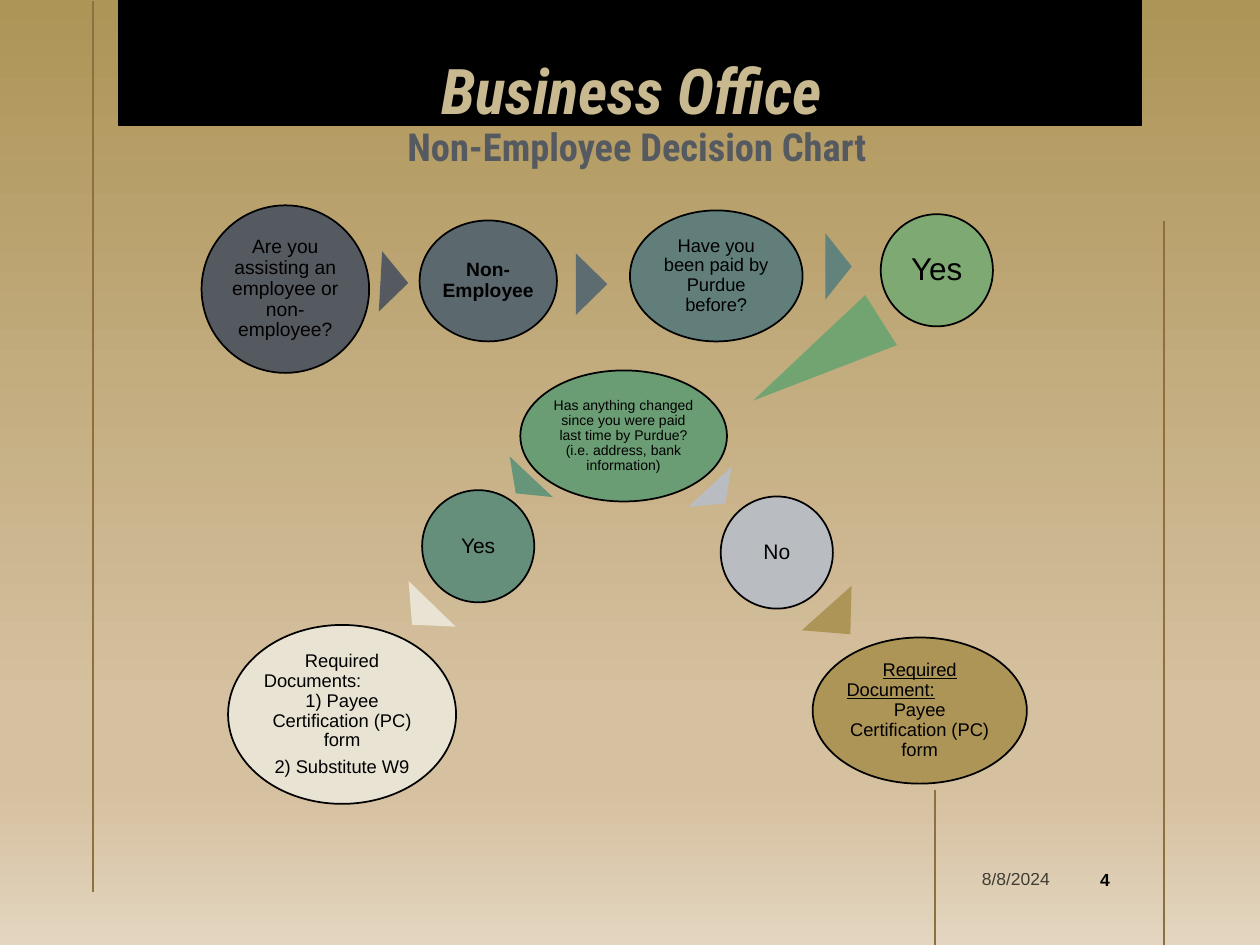
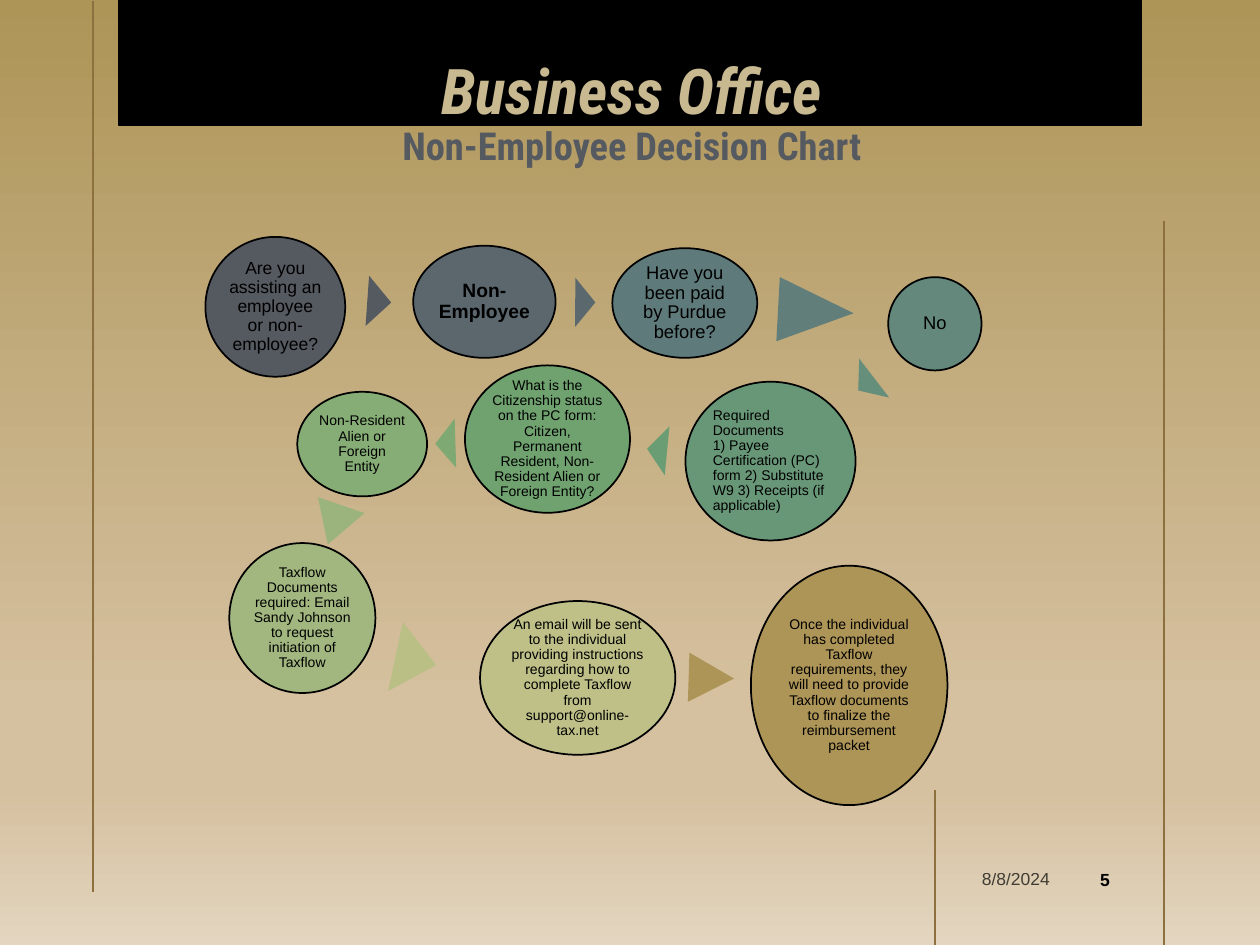
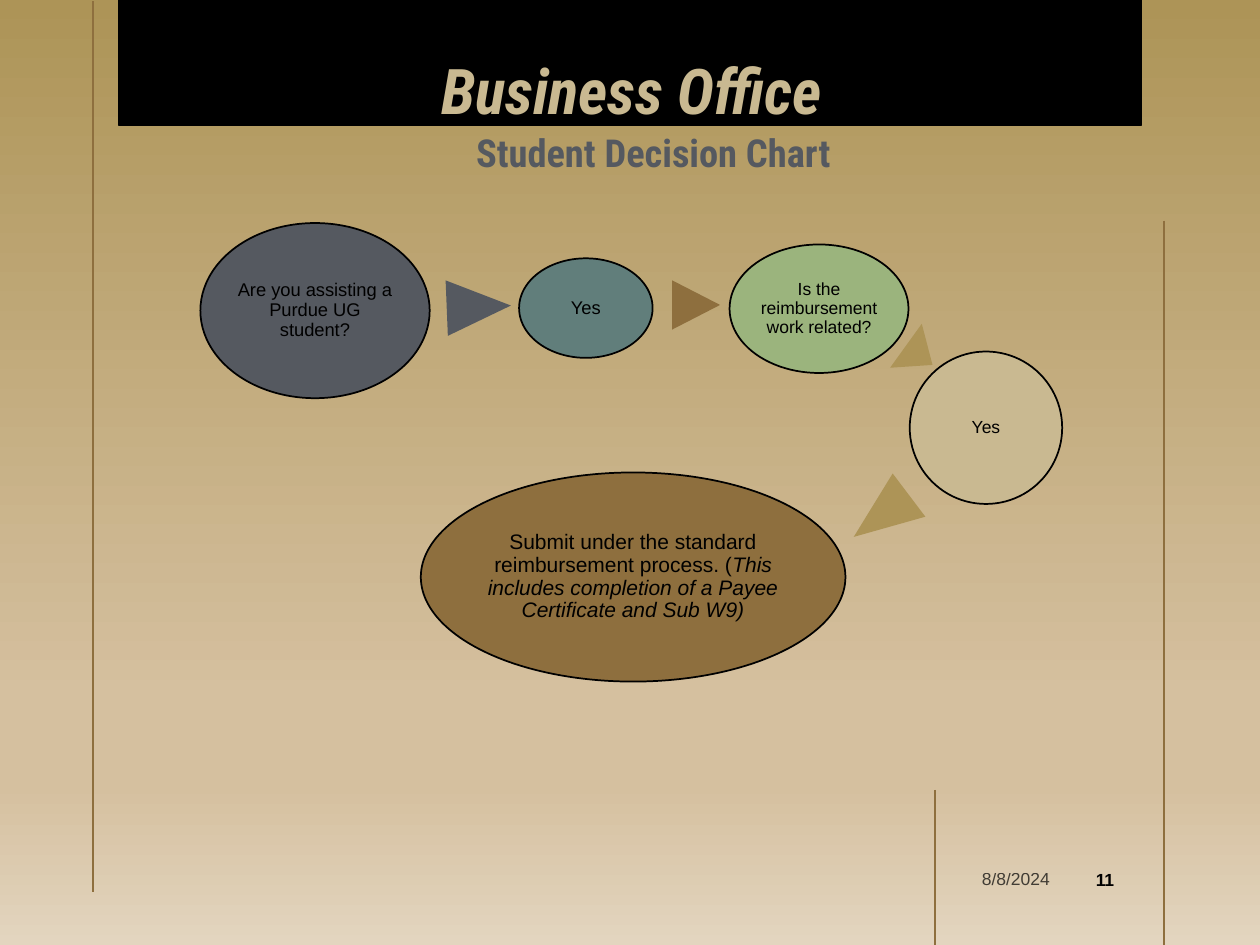
from copy import deepcopy
from dataclasses import dataclass

from lxml.etree import SubElement
from pptx import Presentation
from pptx.dml.color import RGBColor
from pptx.enum.shapes import MSO_CONNECTOR, MSO_SHAPE
from pptx.enum.text import MSO_ANCHOR, MSO_AUTO_SIZE, PP_ALIGN
from pptx.oxml.ns import qn
from pptx.util import Inches, Pt


@dataclass(frozen=True)
class Theme:
    heading: str = "Roboto Condensed"
    body: str = "Arial"
    black: str = "000000"
    gold: str = "AD9457"
    bronze: str = "8E6F3E"
    sand: str = "C9B991"
    slate: str = "555960"
    teal: str = "617E7B"
    leaf: str = "9BB47D"
    stops: tuple = ((0, "AD9457"), (0.74, "D5C09F"), (0.83, "D5C09F"), (1, "E3D5BF"))
    title_size: float = 36
    subtitle_size: float = 22
    footer_size: float = 10
    tiny: float = 8
    small: float = 10
    normal: float = 10.5
    medium: float = 11
    large: float = 12
    huge: float = 18


T = Theme()


@dataclass
class Para:
    runs: tuple  # (text, font formats) pairs
    align: PP_ALIGN = PP_ALIGN.CENTER
    after: float = 0
    tab: float = 0


@dataclass
class Node:
    box: tuple
    fill: str
    size: float
    text: object  # a string or a list of Para
    bold: bool = False


@dataclass
class Arrow:
    box: tuple
    angle: float
    fill: str


# Formatting helpers
def rgb(value):
    return RGBColor.from_string(value)


def apply(target, formats):
    for name, value in formats.items():
        setattr(target, name, value)


def set_font(font, color, **formats):
    apply(font, formats)
    font.color.rgb = rgb(color)


def frame(tf, margins, anchor):
    names = ("margin_left", "margin_top", "margin_right", "margin_bottom")
    apply(tf, {name: Inches(m) for name, m in zip(names, margins)})
    apply(tf, {"word_wrap": True, "vertical_anchor": anchor})


def place(shape, box):
    names = ("left", "top", "width", "height")
    apply(shape, {name: Inches(v) for name, v in zip(names, box)})


def add_shape(s, kind, box, fill=None, line=None):
    sp = s.shapes.add_shape(kind, *map(Inches, box))
    sp.shadow.inherit = False
    if fill:
        sp.fill.solid()
        sp.fill.fore_color.rgb = rgb(fill)
    else:
        sp.fill.background()
    if line:
        sp.line.color.rgb = rgb(line)
        sp.line.width = Pt(1)
    else:
        sp.line.fill.background()
    return sp


def shifted(box, origin):
    return (origin[0] + box[0], origin[1] + box[1], *box[2:])


# Shared layout: gradient, black band and bronze rules
def build_layout(prs):
    layout = prs.slide_layouts[0]
    fill = layout.background.fill
    fill.gradient()
    fill.gradient_angle = 270
    stop_list = layout.element.find(".//" + qn("a:gsLst"))
    for stop in list(stop_list):
        stop_list.append(deepcopy(stop))
    for stop, (position, color) in zip(fill.gradient_stops, T.stops):
        stop.color.rgb = rgb(color)
        stop.position = position
    return layout


def move_bands_to_layout(s, layout):
    parts = [add_shape(s, MSO_SHAPE.RECTANGLE, (0.94, 0, 8.12, 0.99), T.black, T.black)]
    for x, top, bottom in ((0.74, 0.01, 7.08), (7.42, 6.27, 7.5), (9.24, 1.75, 7.5)):
        rule = s.shapes.add_connector(MSO_CONNECTOR.STRAIGHT, *map(Inches, (x, top, x, bottom)))
        rule.line.color.rgb = rgb(T.bronze)
        rule.line.width = Pt(1)
        SubElement(rule.element.spPr, qn("a:effectLst"))
        parts.append(rule)
    for part in parts:
        layout.shapes.element.append(part.element)


# Title and subtitle placeholders
def add_heading(sp, text, box, color, size, spacing, italic):
    place(sp, box)
    tf = sp.text_frame
    frame(tf, (0, 0, 0, 0), MSO_ANCHOR.TOP)
    tf.auto_size = MSO_AUTO_SIZE.SHAPE_TO_FIT_TEXT
    p = tf.paragraphs[0]
    apply(p, {"alignment": PP_ALIGN.CENTER, "line_spacing": spacing, "space_before": Pt(0)})
    r = p.add_run()
    r.text = text
    set_font(r.font, color, name=T.heading, size=Pt(size), bold=True, italic=italic)


# Date and page number
def add_footer(s, number, box):
    date = s.shapes.add_textbox(*map(Inches, shifted((0, 0.02, 0.9, 0.35), box)))
    page = add_shape(s, MSO_SHAPE.OVAL, shifted((1.04, 0, 0.4, 0.4), box))
    for sp, text, align, side, bold in ((date, "8/8/2024", PP_ALIGN.RIGHT, 0.1, False),
                                        (page, number, PP_ALIGN.CENTER, 0.02, True)):
        frame(sp.text_frame, (side, 0.05, side, 0.05), MSO_ANCHOR.MIDDLE)
        p = sp.text_frame.paragraphs[0]
        p.alignment = align
        r = p.add_run()
        r.text = text
        set_font(r.font, T.black, name=T.body, size=Pt(T.footer_size), bold=bold)
    color = date.element.find(".//" + qn("a:srgbClr"))
    SubElement(color, qn("a:alpha"), val="70000")


# Decision chart: triangles between ellipses
def add_node(s, node, origin):
    sp = add_shape(s, MSO_SHAPE.OVAL, shifted(node.box, origin), node.fill, T.black)
    tf = sp.text_frame
    frame(tf, (0.02,) * 4, MSO_ANCHOR.MIDDLE)
    paras = [Para(((node.text, {}),))] if isinstance(node.text, str) else node.text
    for i, para in enumerate(paras):
        p = tf.paragraphs[0] if i == 0 else tf.add_paragraph()
        apply(p, {"alignment": para.align, "line_spacing": 0.9, "space_after": Pt(para.after)})
        if para.tab:
            tabs = SubElement(p._p.get_or_add_pPr(), qn("a:tabLst"))
            SubElement(tabs, qn("a:tab"), pos=str(Inches(para.tab)), algn="l")
        for text, formats in para.runs:
            r = p.add_run()
            r.text = text
            set_font(r.font, T.black, name=T.body, size=Pt(node.size), bold=node.bold, **formats)


def add_chart_flow(s, origin, arrows, nodes):
    for arrow in arrows:
        sp = add_shape(s, MSO_SHAPE.ISOSCELES_TRIANGLE, shifted(arrow.box, origin), arrow.fill)
        sp.rotation = arrow.angle
    for node in nodes:
        add_node(s, node, origin)


def add_decision_slide(prs, layout, number, subtitle, subtitle_at, origin, arrows, nodes):
    s = prs.slides.add_slide(layout)
    add_heading(s.shapes.title, "Business Office", (1.23, 0.48, 7.57, 0.56),
                T.sand, T.title_size, 0.9, True)
    add_heading(s.placeholders[1], subtitle, (*subtitle_at, 7.57, 0.37),
                T.slate, T.subtitle_size, 1.0, False)
    add_footer(s, number, (7.53, 6.78))
    add_chart_flow(s, origin, arrows, nodes)
    return s


# Wording shared by the charts
ASSISTING = "Are you assisting an employee or non-employee?"
PAID_BEFORE = "Have you been paid by Purdue before?"
LEFT = PP_ALIGN.LEFT
UNDERLINE = {"underline": True}

PAID_NODES = [
    Node((0, 0.03, 1.33, 1.33), T.slate, T.medium, ASSISTING),
    Node((1.73, 0.15, 1.09, 0.96), "5B696E", T.medium, "Non-Employee", True),
    Node((3.4, 0.07, 1.37, 1.04), T.teal, T.normal, PAID_BEFORE),
    Node((5.39, 0.1, 0.89, 0.89), "7EA973", T.huge, "Yes"),
    Node((2.53, 1.34, 1.64, 1.04), "6B9D74", T.tiny,
         "Has anything changed since you were paid last time by Purdue? "
         "(i.e. address, bank information)"),
    Node((1.75, 2.29, 0.89, 0.89), "658E7B", T.large, "Yes"),
    Node((0.21, 3.36, 1.81, 1.42), "E9E3D3", T.normal, [
        Para((("Required", {}),)),
        Para((("Documents:", {}),), LEFT),
        Para((("1) Payee Certification (PC) form", {}),), after=3.7),
        Para((("2) Substitute W9", {}),)),
    ]),
    Node((4.12, 2.34, 0.89, 0.89), "B9BCC1", T.large, "No"),
    Node((4.85, 3.46, 1.7, 1.16), T.gold, T.normal, [
        Para((("Required", UNDERLINE),)),
        Para((("Document:\t", UNDERLINE),), LEFT, tab=1.14),
        Para((("Payee Certification (PC) form", {}),)),
    ]),
]
PAID_ARROWS = [
    Arrow((1.29, 0.53, 0.48, 0.22), 93.2, T.slate),
    Arrow((2.85, 0.53, 0.49, 0.25), 90, "5C6C71"),
    Arrow((4.79, 0.41, 0.53, 0.21), 90, "62827C"),
    Arrow((4.65, 0.66, 0.47, 1.2), 237.8, "71A470"),
    Arrow((2.32, 2.16, 0.47, 0.18), 223.2, "679579"),
    Arrow((1.49, 3.16, 0.52, 0.23), 224.1, "E9E3D3"),
    Arrow((3.86, 2.24, 0.47, 0.18), 137.1, "B9BCC1"),
    Arrow((4.79, 3.19, 0.53, 0.28), 138.1, T.gold),
]

UNPAID_NODES = [
    Node((0.03, 0.08, 1.11, 1.11), T.slate, T.small, ASSISTING),
    Node((1.68, 0.15, 1.13, 0.89), "5B676D", T.medium, "Non-Employee", True),
    Node((3.26, 0.17, 1.15, 0.87), "5F7A7A", T.normal, PAID_BEFORE),
    Node((5.45, 0.4, 0.74, 0.74), "64887C", T.normal, "No"),
    Node((3.84, 1.23, 1.35, 1.26), "689778", T.tiny, [
        Para((("Required Documents", {}),), LEFT),
        Para((("1) Payee Certification (PC) form 2) Substitute W9 "
               "3) Receipts (if applicable)", {}),), LEFT),
    ]),
    Node((2.09, 1.1, 1.31, 1.17), "6FA26F", T.tiny,
         "What is the Citizenship status on the PC form: Citizen, Permanent Resident, "
         "Non-Resident Alien or Foreign Entity?"),
    Node((0.76, 1.31, 1.03, 0.83), "87AD76", T.tiny, "Non-Resident Alien or Foreign Entity"),
    Node((0.22, 2.51, 1.16, 1.19), "A2B77F", T.tiny,
         "Taxflow Documents required: Email Sandy Johnson to request initiation of Taxflow"),
    Node((2.21, 2.97, 1.55, 1.22), "BEC088", T.tiny,
         "An email will be sent to the individual providing instructions regarding how to "
         "complete Taxflow from support@online-tax.net"),
    Node((4.36, 2.69, 1.56, 1.9), T.gold, T.tiny,
         "Once the individual has completed Taxflow requirements, they will need to provide "
         "Taxflow documents to finalize the reimbursement packet"),
]
UNPAID_ARROWS = [
    Arrow((1.21, 0.5, 0.4, 0.19), 94, T.slate),
    Arrow((2.85, 0.52, 0.39, 0.16), 90.2, "5B696E"),
    Arrow((4.62, 0.37, 0.51, 0.6), 93.1, T.teal),
    Arrow((5.08, 1.17, 0.39, 0.16), 232.4, "658E7B"),
    Arrow((3.42, 1.69, 0.39, 0.16), 275.6, "6B9D74"),
    Arrow((1.74, 1.64, 0.39, 0.16), 268.2, "7EA973"),
    Arrow((0.86, 2.2, 0.39, 0.33), 198.9, T.leaf),
    Arrow((1.42, 3.28, 0.56, 0.33), 102, "BABF86"),
    Arrow((3.85, 3.4, 0.39, 0.36), 91.8, T.gold),
]

STUDENT_NODES = [
    Node((0, 0, 1.82, 1.39), T.slate, T.normal, "Are you assisting a Purdue UG student?"),
    Node((2.53, 0.28, 1.06, 0.79), T.teal, T.normal, "Yes"),
    Node((4.2, 0.17, 1.42, 1.02), T.leaf, T.small, "Is the reimbursement work related?"),
    Node((5.63, 1.02, 1.21, 1.21), T.sand, T.small, "Yes"),
    Node((1.75, 1.98, 3.37, 1.66), T.bronze, T.large, [
        Para((("Submit under the standard reimbursement process. (", {}),
              ("This includes completion of a Payee Certificate and Sub W9)", {"italic": True}))),
    ]),
]
STUDENT_ARROWS = [
    Arrow((1.99, 0.41, 0.44, 0.51), 87.7, T.slate),
    Arrow((3.74, 0.46, 0.39, 0.38), 90, T.bronze),
    Arrow((5.49, 0.92, 0.43, 0.26), 125.8, T.gold),
    Arrow((5.19, 2.05, 0.43, 0.55), 232.9, T.gold),
]


def main():
    prs = Presentation()
    prs.slide_width, prs.slide_height = Inches(10), Inches(7.5)
    layout = build_layout(prs)
    non_employee = "Non-Employee Decision Chart"
    s = add_decision_slide(prs, layout, "4", non_employee, (1.27, 0.98), (1.6, 1.6),
                           PAID_ARROWS, PAID_NODES)
    move_bands_to_layout(s, layout)
    add_decision_slide(prs, layout, "5", non_employee, (1.23, 0.97), (1.6, 1.8),
                       UNPAID_ARROWS, UNPAID_NODES)
    add_decision_slide(prs, layout, "11", "Student Decision Chart", (1.4, 1.02), (1.59, 1.77),
                       STUDENT_ARROWS, STUDENT_NODES)
    prs.save("out.pptx")


if __name__ == "__main__":
    main()
